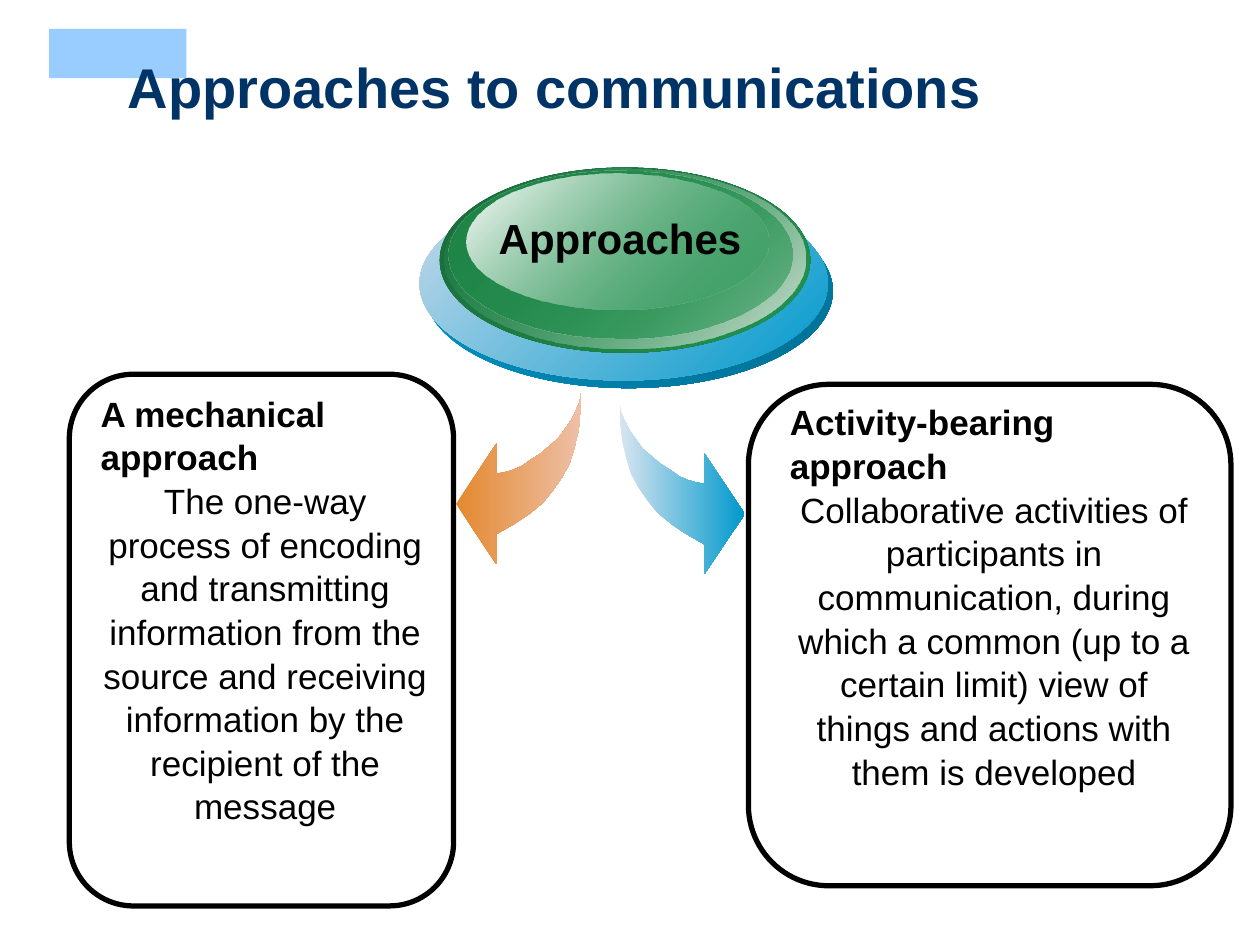
"""Build the slide on two approaches to communications."""
from pptx import Presentation
from pptx.dml.color import RGBColor as Color
from pptx.enum.shapes import MSO_SHAPE as Shape
from pptx.enum.text import MSO_ANCHOR as Anchor, PP_ALIGN as Align
from pptx.oxml.ns import qn
from pptx.util import Inches, Pt
from lxml.etree import SubElement

COLUMNS, ROWS = 100, 75
CELL = Inches(0.1)
FONT = "Arial"

BLACK = Color(0x00, 0x00, 0x00)
WHITE = Color(0xFF, 0xFF, 0xFF)
NAVY = Color(0x00, 0x33, 0x66)
SKY = Color(0x99, 0xCC, 0xFF)
ORANGE = Color(0xE3, 0x89, 0x2F)
PEACH = Color(0xEE, 0xBF, 0xA7)
BLUE = Color(0x00, 0x99, 0xCC)
DEEP_BLUE = Color(0x00, 0x70, 0x95)
PALE_BLUE = Color(0xD8, 0xE5, 0xF0)
ICE = Color(0xC6, 0xDA, 0xEA)
GREEN = Color(0x22, 0x94, 0x50)
MID_GREEN = Color(0x1F, 0x86, 0x48)
DARK_GREEN = Color(0x18, 0x6A, 0x39)
PALE_GREEN = Color(0xD4, 0xE1, 0xD7)

DISCS = [
    ((33.7, 15.4, 32.4, 15.4), (BLUE, 100), (DEEP_BLUE, 100)),
    ((33.3, 14.8, 32.4, 15.4), (ICE, 100), (BLUE, 100)),
    ((34.9, 13.3, 29.4, 14.7), (DARK_GREEN, 100), (GREEN, 100)),
    ((35.3, 13.4, 28.6, 14.3), (GREEN, 0), (PALE_GREEN, 100)),
    ((35.6, 13.5, 27.3, 13.4), (MID_GREEN, 100), (GREEN, 48)),
    ((37, 13.8, 24, 10.8), (WHITE, 100), (GREEN, 38)),
]

ARROW = [
    (0, 0), (0, 1.6), (0.2, 3), (0.5, 4.3), (0.9, 5.6), (1.5, 6.7),
    (2.2, 7.7), (3, 8.7), (4.1, 9.6), (5.3, 10.4), (6.7, 11.2),
    (6.7, 13.6), (9.9, 8.8), (6.7, 4), (6.7, 6.4), (6.1, 6.3),
    (5.4, 6.1), (4.7, 5.8), (4, 5.3), (3.2, 4.8), (2.5, 4.2),
    (1.8, 3.6), (1.3, 2.9), (0.8, 2.2), (0.4, 1.4), (0.1, 0.7),
]

APPROACHES = [
    ((59.4, 30.5, 38.3, 39.8), (61.7, 31.2, 34.4, 31.3),
     "Activity-bearing approach",
     "Collaborative activities of participants in communication, during "
     "which a common (up to a certain limit) view of things and actions "
     "with them is developed"),
    ((5.5, 29.7, 30.5, 42.2), (7, 30.5, 28.1, 34.7),
     "A mechanical approach",
     "The one-way process of encoding and transmitting information from the "
     "source and receiving information by the recipient of the message"),
]


def cells(*lengths):
    """Turn grid lengths into slide units."""
    return [int(length * CELL) for length in lengths]


def format_paragraph(para, size, bold, color=BLACK, align=Align.LEFT):
    """Set the font and alignment of a paragraph."""
    para.alignment = align
    for span in para.runs:
        font = span.font
        font.name, font.size, font.bold = FONT, Pt(size), bold
        font.color.rgb = color


def fill_gradient(shape, start, end, angle):
    """Fill a shape with two (colour, opacity) stops and no outline."""
    shape.shadow.inherit = False
    shape.line.fill.background()
    shape.fill.gradient()
    shape.fill.gradient_angle = angle
    for stop, (color, opacity) in zip(shape.fill.gradient_stops, (start, end)):
        stop.color.rgb = color
    colors = shape._element.spPr.iter(qn("a:srgbClr"))
    for node, (color, opacity) in zip(colors, (start, end)):
        if opacity < 100:
            SubElement(node, qn("a:alpha")).set("val", str(opacity * 1000))


def add_text(page, place, lines):
    """Add a wrapping text box and return its paragraphs."""
    frame = page.shapes.add_textbox(*cells(*place)).text_frame
    frame.word_wrap = True
    frame.text = "\n".join(lines)
    return frame.paragraphs


def add_approach(page, outline, place, heading, body):
    """Add a rounded outline with a heading and centred body text."""
    box = page.shapes.add_shape(Shape.ROUNDED_RECTANGLE, *cells(*outline))
    box.shadow.inherit = False
    box.fill.background()
    box.line.color.rgb = BLACK
    box.line.width = Pt(3)
    title, description = add_text(page, place, (heading, body))
    format_paragraph(title, 20, True)
    format_paragraph(description, 20, False, align=Align.CENTER)
    for para in (title, description):
        para.line_spacing = 1.04


def add_arrow(page, left, top, direction, start, end):
    """Add a curved arrow; direction is -1 to the left, 1 to the right."""
    points = [cells(left + direction * x, top + y) for x, y in ARROW]
    builder = page.shapes.build_freeform(*points[0])
    builder.add_line_segments(points[1:], close=True)
    fill_gradient(builder.convert_to_shape(), (start, 100), (end, 100), 0)


def add_button(page):
    """Stack the gradient discs and label them."""
    group = page.shapes.add_group_shape()
    for place, start, end in DISCS:
        disc = group.shapes.add_shape(Shape.OVAL, *cells(*place))
        fill_gradient(disc, start, end, 315)
    label, = add_text(page, (38.6, 16.4, 23.3, 5), ["Approaches"])
    format_paragraph(label, 24, True)


def add_title(page):
    """Add the accent block and format the title over it."""
    accent = page.shapes.add_shape(Shape.RECTANGLE, *cells(3.9, 2.3, 10.9, 3.9))
    accent.shadow.inherit = False
    accent.fill.solid()
    accent.fill.fore_color.rgb = SKY
    accent.line.fill.background()
    title = page.shapes.title
    title.left, title.top, title.width, title.height = cells(8.9, 4.2, 70, 5.3)
    page.shapes._spTree.append(title._element)
    frame = title.text_frame
    frame.text = "Approaches to communications"
    frame.vertical_anchor = Anchor.MIDDLE
    format_paragraph(frame.paragraphs[0], 32, True, NAVY, Align.RIGHT)


def main():
    """Build and save the deck."""
    deck = Presentation()
    deck.slide_width, deck.slide_height = cells(COLUMNS, ROWS)
    page = deck.slides.add_slide(deck.slide_layouts[5])
    for approach in APPROACHES:
        add_approach(page, *approach)
    add_arrow(page, 46.1, 31.2, -1, ORANGE, PEACH)
    add_arrow(page, 49.2, 32, 1, PALE_BLUE, BLUE)
    add_button(page)
    add_title(page)
    deck.save("out.pptx")


if __name__ == "__main__":
    main()
